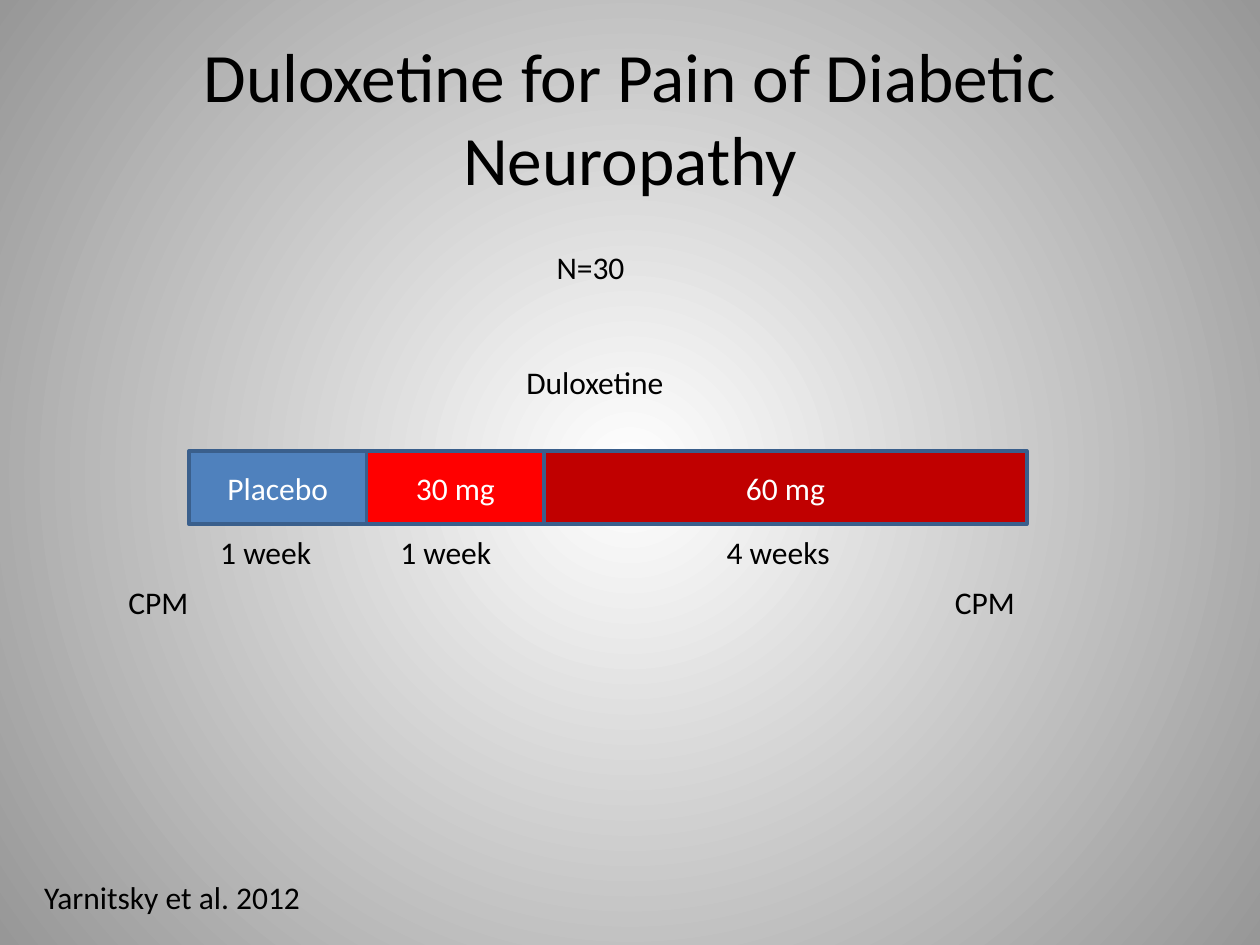
from dataclasses import dataclass

from lxml import etree
from pptx import Presentation
from pptx.dml.color import RGBColor
from pptx.enum.shapes import MSO_SHAPE
from pptx.enum.text import MSO_ANCHOR, MSO_AUTO_SIZE, PP_ALIGN
from pptx.oxml.ns import qn
from pptx.util import Cm, Pt

RECTANGLE = MSO_SHAPE.RECTANGLE
TOP, MIDDLE = MSO_ANCHOR.TOP, MSO_ANCHOR.MIDDLE
LEFT, CENTER = PP_ALIGN.LEFT, PP_ALIGN.CENTER
FIT_SHAPE = MSO_AUTO_SIZE.SHAPE_TO_FIT_TEXT
FONT = "Calibri"
COLOURS = {
    "black": "000000",
    "white": "FFFFFF",
    "edge": "979797",
    "placebo": "4F81BD",
    "low dose": "FF0000",
    "full dose": "C00000",
    "outline": "3A5F8C",
}
BAR_LEFT, BAR_TOP, BAR_HEIGHT = 3.81, 9.09, 1.48
LABEL_HEIGHT = 1.02
WEEKS_TOP, CPM_TOP = 10.62, 11.63


@dataclass(frozen=True)
class Phase:
    text: str
    width: float
    colour: str


@dataclass(frozen=True)
class Label:
    text: str
    left: float
    top: float
    width: float


PHASES = [
    Phase("Placebo", 3.58, "placebo"),
    Phase("30 mg", 3.58, "low dose"),
    Phase("60 mg", 9.73, "full dose"),
]
LABELS = [
    Label("Duloxetine", 10.36, 7.19, 3.33),
    Label("CPM", 2.34, CPM_TOP, 1.73),
    Label("CPM", 19, CPM_TOP, 1.73),
    Label("N=30", 10.97, 4.88, 1.91),
    Label("Yarnitsky et al. 2012", 0.64, 17.58, 5.72),
    Label("1 week", 4.19, WEEKS_TOP, 2.36),
    Label("1 week", 7.82, WEEKS_TOP, 2.36),
    Label("4 weeks", 14.4, WEEKS_TOP, 2.62),
]


def colour(name: str) -> RGBColor:
    return RGBColor.from_string(COLOURS[name])


def write_text(shape, text: str, *, size: float = 18, colour_name: str = "black",
               align=LEFT, anchor=TOP, wrap: bool = True) -> None:
    frame = shape.text_frame
    frame.word_wrap = wrap
    frame.vertical_anchor = anchor
    paragraph = frame.paragraphs[0]
    paragraph.alignment = align
    run = paragraph.add_run()
    run.text = text
    run.font.name = FONT
    run.font.size = Pt(size)
    run.font.color.rgb = colour(colour_name)


def paint_background(slide) -> None:
    """Fill the background with a circular gradient, light in the centre."""
    fill = slide.background.fill
    fill.gradient()
    for stop, name, position in zip(fill.gradient_stops, ("white", "edge"), (0, 1)):
        stop.color.rgb = colour(name)
        stop.position = position
    gradient = slide.element.find(".//" + qn("a:gradFill"))
    linear = gradient.find(qn("a:lin"))
    circle = etree.Element(qn("a:path"), path="circle")
    centre = {side: "50000" for side in "ltrb"}
    etree.SubElement(circle, qn("a:fillToRect"), centre)
    gradient.replace(linear, circle)


def add_title(slide, text: str) -> None:
    title = slide.shapes.add_textbox(Cm(1.27), Cm(0.76), Cm(22.86), Cm(3.18))
    write_text(title, text, size=39.6, align=CENTER, anchor=MIDDLE)


def add_phase(slide, phase: Phase, left: float) -> None:
    bar = slide.shapes.add_shape(
        RECTANGLE, Cm(left), Cm(BAR_TOP), Cm(phase.width), Cm(BAR_HEIGHT))
    bar.shadow.inherit = False
    bar.fill.solid()
    bar.fill.fore_color.rgb = colour(phase.colour)
    bar.line.color.rgb = colour("outline")
    bar.line.width = Pt(2)
    write_text(bar, phase.text, colour_name="white", align=CENTER, anchor=MIDDLE)


def add_label(slide, label: Label) -> None:
    box = slide.shapes.add_textbox(
        Cm(label.left), Cm(label.top), Cm(label.width), Cm(LABEL_HEIGHT))
    write_text(box, label.text, wrap=False)
    box.text_frame.auto_size = FIT_SHAPE


def main() -> None:
    presentation = Presentation()
    presentation.slide_width, presentation.slide_height = Cm(25.4), Cm(19.05)
    slide = presentation.slides.add_slide(presentation.slide_layouts[6])
    paint_background(slide)
    add_title(slide, "Duloxetine for Pain of Diabetic Neuropathy")
    left = BAR_LEFT
    for phase in PHASES:
        add_phase(slide, phase, left)
        left += phase.width
    for label in LABELS:
        add_label(slide, label)
    presentation.save("out.pptx")


if __name__ == "__main__":
    main()
